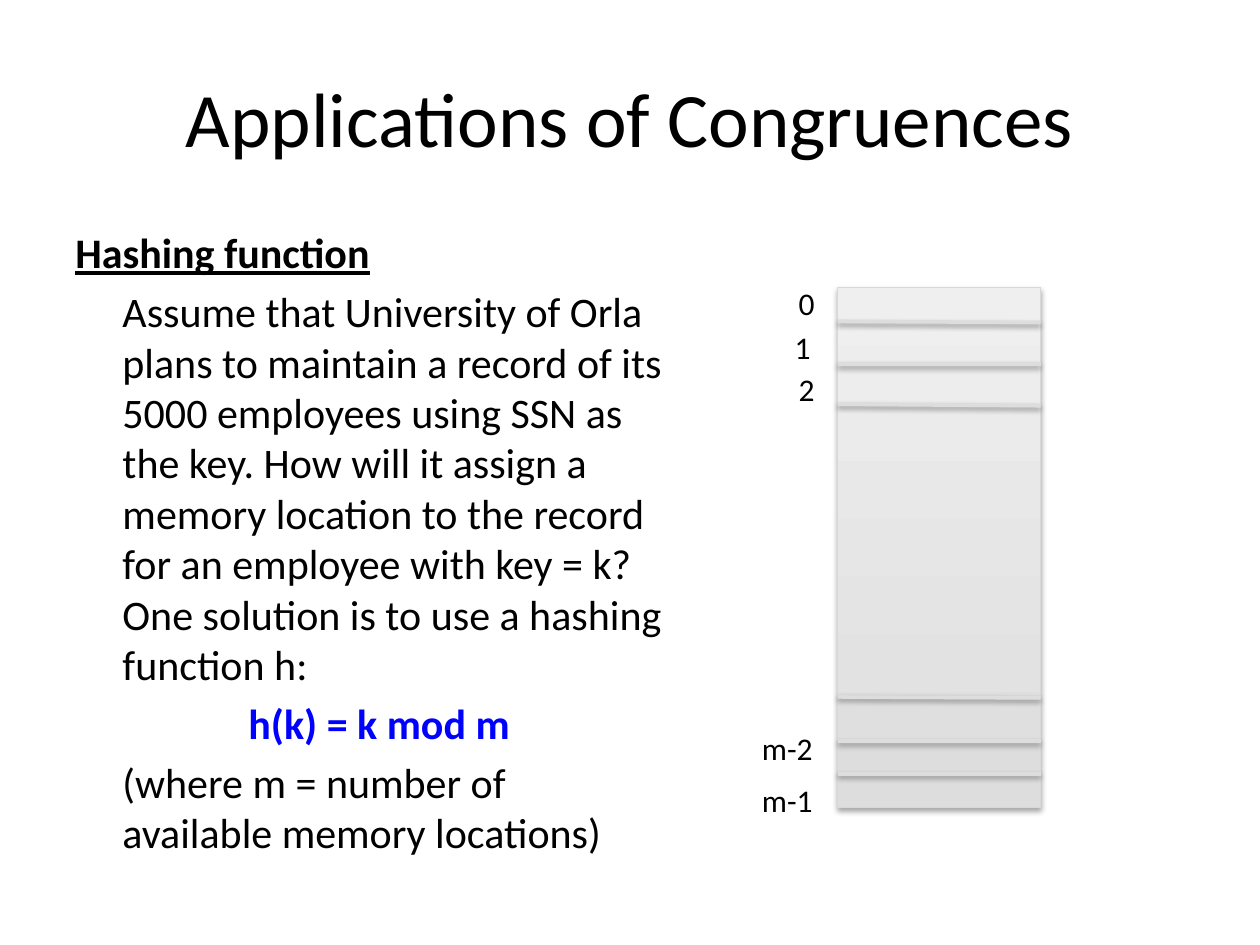
"""Builds a slide on hashing as an application of congruences."""
from dataclasses import dataclass
from typing import NamedTuple

from lxml import etree
from pptx import Presentation
from pptx import util as u
from pptx.dml.color import RGBColor
from pptx.enum import shapes, text
from pptx.oxml import ns


@dataclass(frozen=True)
class Theme:
    font: str = "Calibri"
    ink: str = "000000"
    formula: str = "0000FF"
    memory_low: str = "DDDDDD"
    memory_high: str = "EFEFEF"
    memory_edge: str = "D8D8D8"
    divider: str = "DDDDDD"
    title_size: float = 44
    body_size: float = 24
    label_size: float = 18


class Box(NamedTuple):
    left: float
    top: float
    width: float
    height: float

    def lengths(self) -> list:
        return [u.Cm(value) for value in self]


class Words(NamedTuple):
    wording: str
    size: float
    color: str
    bold: bool = False
    underline: bool = False


class Divider(NamedTuple):
    start: float
    end: float


class Address(NamedTuple):
    wording: str
    left: float
    top: float
    width: float


class Shadow(NamedTuple):
    opacity: int
    blur: float
    distance: float


THEME = Theme()
TITLE = Box(1.27, 0.76, 22.86, 3.18)
BODY = Box(1.27, 4.45, 12.55, 12.19)
MEMORY = Box(16.89, 5.79, 4.09, 10.49)
HANGING = 0.95
LABEL_HEIGHT = 1.02
MEMORY_SHADOW = Shadow(35, 3.1, 1.8)
DIVIDER_SHADOW = Shadow(38, 3.1, 1.6)

EXPLANATION = [
    Words("Hashing function", THEME.body_size, THEME.ink, True, True),
    Words("\tAssume that University of Orla plans to maintain a record of its "
          "5000 employees using SSN as the key. How will it assign a memory "
          "location to the record for an employee with key = k? One solution "
          "is to use a hashing function h:", THEME.body_size, THEME.ink),
    Words("\t\t\th(k) = k mod m", THEME.body_size, THEME.formula, True),
    Words("\t(where m = number of  available memory locations)",
          THEME.body_size, THEME.ink),
]
DIVIDERS = [
    Divider(6.48, 6.5), Divider(8.15, 8.18), Divider(7.34, 7.34),
    Divider(14.05, 14.07), Divider(14.94, 14.94), Divider(15.6, 15.6),
]
ADDRESSES = [
    Address("0", 15.85, 5.61, 0.84), Address("1", 15.77, 6.48, 0.84),
    Address("2", 15.85, 7.34, 0.84), Address("m-1", 15.11, 15.62, 1.57),
    Address("m-2", 15.11, 14.58, 1.57),
]


def rgb(value: str) -> RGBColor:
    return RGBColor.from_string(value)


def assign(target, values: dict) -> None:
    for name, value in values.items():
        setattr(target, name, value)


def write(paragraph, words: Words) -> None:
    run = paragraph.add_run()
    run.text = words.wording
    assign(run.font, {"name": THEME.font, "size": u.Pt(words.size),
                      "bold": words.bold, "underline": words.underline})
    run.font.color.rgb = rgb(words.color)


def cast_shadow(properties, shadow: Shadow) -> None:
    effects = properties.find(ns.qn("a:effectLst"))
    if effects is None:
        effects = etree.SubElement(properties, ns.qn("a:effectLst"))
    outer = etree.SubElement(
        effects, ns.qn("a:outerShdw"), blurRad=str(u.Pt(shadow.blur)),
        dist=str(u.Pt(shadow.distance)), dir="5400000", rotWithShape="0")
    black = etree.SubElement(outer, ns.qn("a:srgbClr"), val=THEME.ink)
    etree.SubElement(black, ns.qn("a:alpha"), val=str(shadow.opacity * 1000))


def draw_title(slide, wording: str) -> None:
    frame = slide.shapes.add_textbox(*TITLE.lengths()).text_frame
    assign(frame, {"word_wrap": True, "vertical_anchor": text.MSO_ANCHOR.MIDDLE})
    heading = frame.paragraphs[0]
    heading.alignment = text.PP_ALIGN.CENTER
    write(heading, Words(wording, THEME.title_size, THEME.ink))


def draw_explanation(slide, passages: list[Words]) -> None:
    frame = slide.shapes.add_textbox(*BODY.lengths()).text_frame
    frame.word_wrap = True
    for index, words in enumerate(passages):
        paragraph = frame.add_paragraph() if index else frame.paragraphs[0]
        paragraph.space_before = u.Pt(0.2 * words.size)
        indents = paragraph._p.get_or_add_pPr()
        indents.set("marL", str(u.Cm(HANGING)))
        indents.set("indent", str(-u.Cm(HANGING)))
        write(paragraph, words)


def draw_memory(slide) -> None:
    memory = slide.shapes.add_shape(shapes.MSO_SHAPE.RECTANGLE, *MEMORY.lengths())
    memory.fill.gradient()
    memory.fill.gradient_angle = 90
    tones = (THEME.memory_low, THEME.memory_high)
    for position, (stop, tone) in enumerate(zip(memory.fill.gradient_stops, tones)):
        stop.position = position
        stop.color.rgb = rgb(tone)
    memory.line.color.rgb = rgb(THEME.memory_edge)
    memory.line.width = u.Pt(0.75)
    memory.shadow.inherit = False
    cast_shadow(memory._element.spPr, MEMORY_SHADOW)


def draw_divider(slide, divider: Divider) -> None:
    border = slide.shapes.add_connector(
        shapes.MSO_CONNECTOR.STRAIGHT, u.Cm(MEMORY.left), u.Cm(divider.start),
        u.Cm(MEMORY.left + MEMORY.width), u.Cm(divider.end))
    border.line.color.rgb = rgb(THEME.divider)
    border.line.width = u.Pt(2)
    cast_shadow(border._element.spPr, DIVIDER_SHADOW)


def draw_address(slide, address: Address) -> None:
    area = Box(address.left, address.top, address.width, LABEL_HEIGHT)
    frame = slide.shapes.add_textbox(*area.lengths()).text_frame
    assign(frame, {"word_wrap": False,
                   "auto_size": text.MSO_AUTO_SIZE.SHAPE_TO_FIT_TEXT})
    write(frame.paragraphs[0], Words(address.wording, THEME.label_size, THEME.ink))


def main() -> None:
    deck = Presentation()
    assign(deck, {"slide_width": u.Cm(25.4), "slide_height": u.Cm(19.05)})
    slide = deck.slides.add_slide(deck.slide_layouts[6])
    draw_title(slide, "Applications of Congruences")
    draw_explanation(slide, EXPLANATION)
    draw_memory(slide)
    for divider in DIVIDERS:
        draw_divider(slide, divider)
    for address in ADDRESSES:
        draw_address(slide, address)
    deck.save("out.pptx")


if __name__ == "__main__":
    main()
